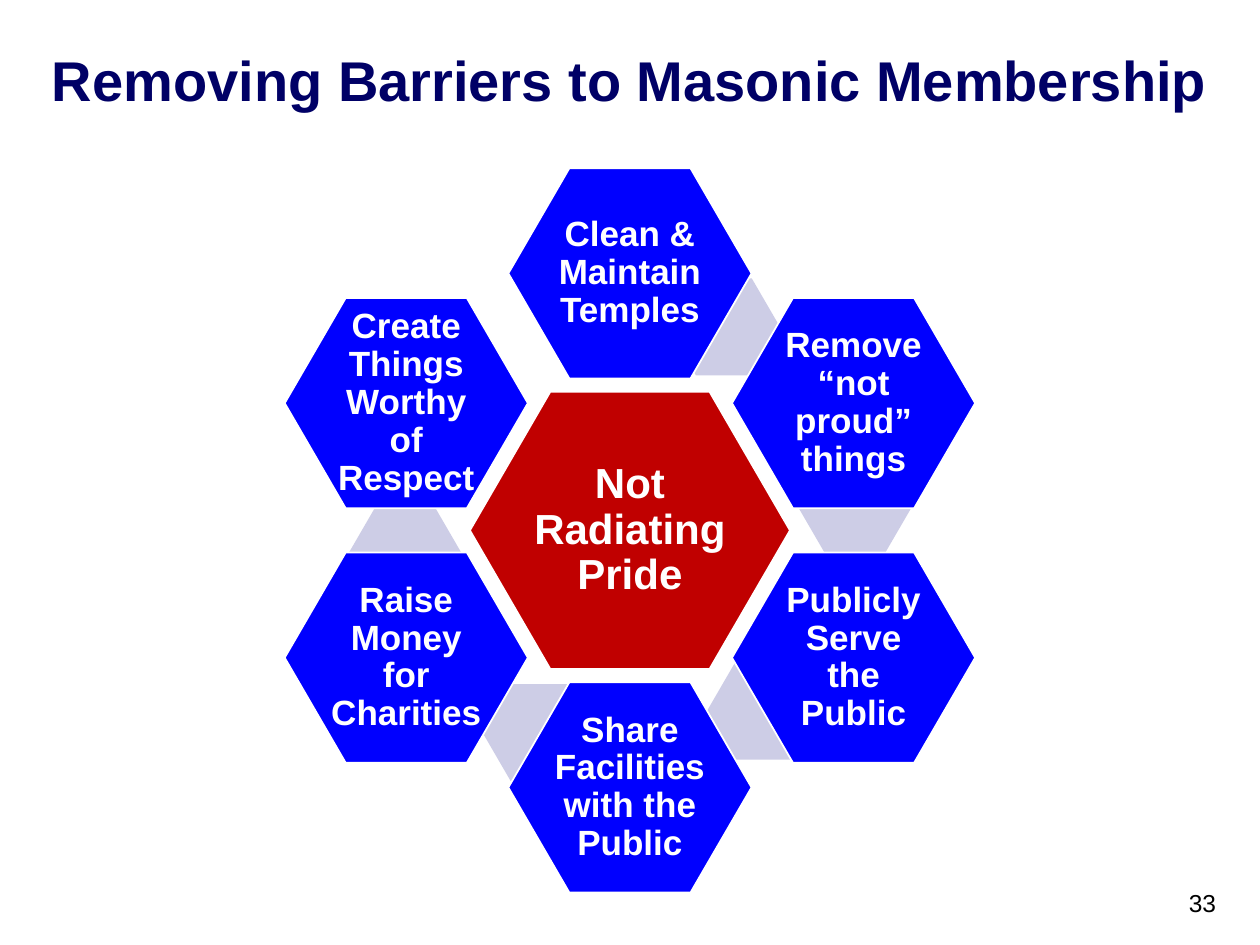
"""Build a slide with a ring of six remedies around one central barrier."""
from pptx import Presentation
from pptx.dml.color import RGBColor
from pptx.enum import shapes, text
from pptx.util import Inches, Pt


def paint(color_format, color):
    color_format.rgb = RGBColor.from_string(color)


def write(frame, wording, size, color, bold, align, anchor):
    frame.word_wrap = True
    frame.vertical_anchor = anchor
    paragraph = frame.paragraphs[0]
    paragraph.text = wording
    paragraph.alignment = align
    paragraph.font.name = "Arial"
    paragraph.font.size = Pt(size)
    paragraph.font.bold = bold
    paint(paragraph.font.color, color)


CENTER, RIGHT = text.PP_ALIGN.CENTER, text.PP_ALIGN.RIGHT
MIDDLE, TOP = text.MSO_ANCHOR.MIDDLE, text.MSO_ANCHOR.TOP

center_x, center_y = 5, 4.21
side_x, side_y, pole_y = 1.775, 1.01, 2.04
petal_size, link_size, barrier_size = (1.93, 1.67), (0.89, 0.77), (2.54, 2.2)

remedies = [
    ("Clean & Maintain Temples", 0, -pole_y, (5.3, 2.21)),
    ("Remove “not proud” things", side_x, -side_y, (6.34, 3.65)),
    ("Publicly Serve the Public", side_x, side_y, (5.61, 5.26)),
    ("Share Facilities with the Public", 0, pole_y, (3.83, 5.43)),
    ("Raise Money for Charities", -side_x, side_y, (2.77, 4)),
    ("Create Things Worthy of Respect", -side_x, -side_y, None),
]

hexagons = [("Not Radiating Pride", 24, "C00000", center_x, center_y, barrier_size)]
for remedy, offset_x, offset_y, link in remedies:
    if link:
        link_x, link_y = link[0] + link_size[0] / 2, link[1] + link_size[1] / 2
        hexagons.append((None, None, "CDCDE6", link_x, link_y, link_size))
    hexagons.append((remedy, 20, "0000FF", center_x + offset_x, center_y + offset_y, petal_size))

deck = Presentation()
deck.slide_width, deck.slide_height = Inches(10), Inches(7.5)
slide = deck.slides.add_slide(deck.slide_layouts[6])

title = slide.shapes.add_textbox(0, 0, Inches(10), Inches(1.25))
write(title.text_frame, "Removing Barriers to Masonic Membership", 32, "000066", True, CENTER, MIDDLE)

page_number = slide.shapes.add_textbox(Inches(7.67), Inches(7), Inches(2.08), Inches(0.5))
write(page_number.text_frame, "33", 14, "000000", False, RIGHT, TOP)

for wording, size, fill, x, y, (width, height) in hexagons:
    hexagon = slide.shapes.add_shape(
        shapes.MSO_SHAPE.HEXAGON,
        Inches(x - width / 2), Inches(y - height / 2), Inches(width), Inches(height))
    hexagon.shadow.inherit = False
    hexagon.adjustments[0] = 0.29
    hexagon.fill.solid()
    paint(hexagon.fill.fore_color, fill)
    if not wording:
        hexagon.line.fill.background()
        continue
    paint(hexagon.line.color, "FFFFFF")
    hexagon.line.width = Pt(1)
    frame = hexagon.text_frame
    frame.margin_left = frame.margin_right = Inches(0.03)
    frame.margin_top = frame.margin_bottom = Inches(0.03)
    write(frame, wording, size, "FFFFFF", True, CENTER, MIDDLE)
    frame.paragraphs[0].line_spacing = 0.9

deck.save("out.pptx")
